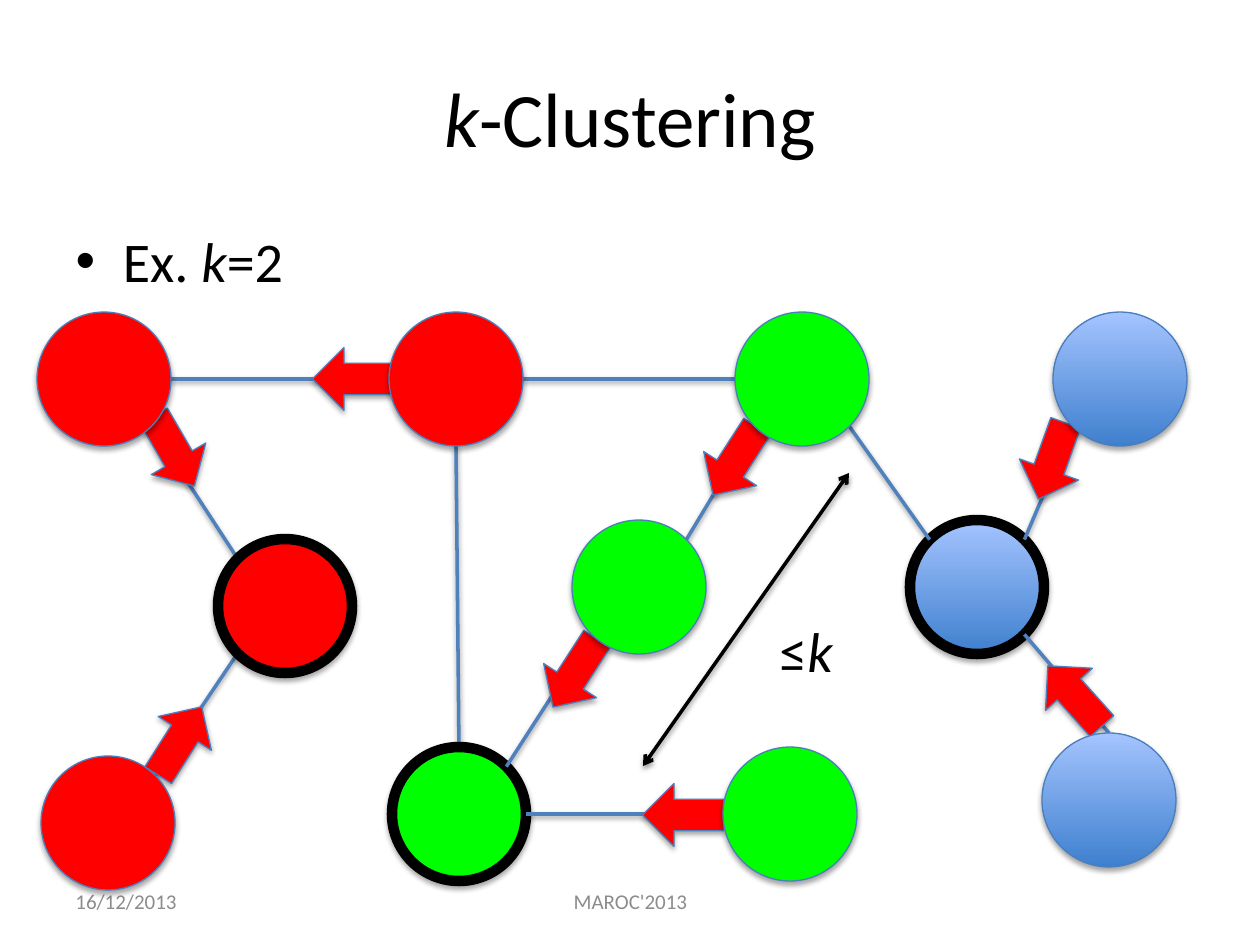
import pptx
import pptx.util
import pptx.dml.color
import pptx.enum.shapes
import pptx.enum.text
import pptx.oxml
import pptx.oxml.ns

COLORS = {"red": "FF0000", "green": "00FF00", "blue_low": "3F80CE", "blue_high": "A4C4FF",
          "link": "4F81BD", "rim": "4B7EBC", "black": "000000", "footer": "8C8C8C"}
FONT = "Calibri"
SCALE = 914400 / 126
DIAMETER = 134
ARROW_SIZE = (81, 63)

TITLE = [("k", True), ("-Clustering", False)]
EXAMPLE = [("Ex. ", False), ("k", True), ("=2", False)]
DISTANCE = [("≤", False), ("k", True)]
DATE = [("16/12/2013", False)]
EVENT = [("MAROC'2013", False)]

HUBS = {"red hub": (285, 606, "red"), "green hub": (459, 814, "green"),
        "blue hub": (977, 587, "blue")}
MEMBERS = {"red top": (456, 379, "red"), "red left": (104, 379, "red"),
           "red low": (108, 823, "red"), "green top": (802, 379, "green"),
           "green right": (790, 814, "green"), "blue top": (1120, 379, "blue"),
           "blue low": (1109, 800, "blue"), "green mid": (639, 587, "green")}
NODES = {**HUBS, **MEMBERS}

LINKS_BEHIND_HUBS = [("red left", "SE", "red hub", "NW"), ("red top", "S", "green hub", "N"),
                     ("green top", "SW", "green mid", "NE"), ("red hub", "SW", "red low", "NE")]
LINKS_OVER_HUBS = [("red left", "E", "red top", "W"), ("red top", "E", "green top", "W"),
                   ("green right", "W", "green hub", "E"), ("green mid", "SW", "green hub", "NE"),
                   ("green top", "SE", "blue hub", "NW"), ("blue top", "SW", "blue hub", "NE"),
                   ("blue low", "N", "blue hub", "SE")]
ARROWS = [(180, 741, 302.4), (174, 451, 59.9), (353, 379, 180), (683, 815, 180),
          (575, 673, 122.8), (735, 461, 122.8), (1052, 461, 109.7), (1075, 696, 228.1)]
SPAN = ((849, 473), (643, 766))


def px(value):
    return pptx.util.Emu(round(value * SCALE))


def rgb(name):
    return pptx.dml.color.RGBColor.from_string(COLORS[name])


def place(shape, left, top, width, height):
    shape.left, shape.top, shape.width, shape.height = map(px, (left, top, width, height))


def write(frame, runs, size, color="black", align=None):
    paragraph = frame.paragraphs[0]
    paragraph.alignment = align
    for text, italic in runs:
        run = paragraph.add_run()
        run.text = text
        run.font.name = FONT
        run.font.size = pptx.util.Pt(size)
        run.font.italic = italic
        run.font.color.rgb = rgb(color)


def add_shadow(shape, distance, opacity):
    shape._element.spPr.append(pptx.oxml.parse_xml(
        f'<a:effectLst {pptx.oxml.ns.nsdecls("a")}>'
        f'<a:outerShdw blurRad="39370" dist="{pptx.util.Pt(distance)}" dir="5400000" rotWithShape="0">'
        f'<a:srgbClr val="{COLORS["black"]}"><a:alpha val="{opacity * 1000}"/></a:srgbClr>'
        '</a:outerShdw></a:effectLst>'))


def add_solid(kind, center, size, color, rim="rim", rim_width=0.75):
    width, height = size
    shape = slide.shapes.add_shape(kind, px(center[0] - width / 2), px(center[1] - height / 2),
                                   px(width), px(height))
    if color == "blue":
        shape.fill.gradient()
        shape.fill.gradient_angle = 90
        for stop, shade in zip(shape.fill.gradient_stops, ("blue_low", "blue_high")):
            stop.color.rgb = rgb(shade)
    else:
        shape.fill.solid()
        shape.fill.fore_color.rgb = rgb(color)
    shape.line.color.rgb = rgb(rim)
    shape.line.width = pptx.util.Pt(rim_width)
    add_shadow(shape, 1.8, 35)
    return shape


def add_nodes(nodes, **rim):
    for x, y, color in nodes.values():
        add_solid(pptx.enum.shapes.MSO_SHAPE.OVAL, (x, y), (DIAMETER, DIAMETER), color, **rim)


def port(node, side):
    x, y, _ = NODES[node]
    reach = DIAMETER / 2 / len(side) ** 0.5
    return (x + reach * (("E" in side) - ("W" in side)),
            y + reach * (("S" in side) - ("N" in side)))


def add_line(start, end, color, heads=False):
    line = slide.shapes.add_connector(pptx.enum.shapes.MSO_CONNECTOR.STRAIGHT,
                                      *map(px, (*start, *end)))
    line.line.color.rgb = rgb(color)
    line.line.width = pptx.util.Pt(2)
    if heads:
        for tag in ("headEnd", "tailEnd"):
            line.line._get_or_add_ln().append(pptx.oxml.parse_xml(
                f'<a:{tag} {pptx.oxml.ns.nsdecls("a")} type="arrow"/>'))
    add_shadow(line, 1.6, 38)


def add_links(links):
    for start, start_side, end, end_side in links:
        add_line(port(start, start_side), port(end, end_side), "link")


def add_label(box, runs, size, color="black", align=None, wrap=True):
    label = slide.shapes.add_textbox(*map(px, box))
    label.text_frame.word_wrap = wrap
    if wrap:
        label.text_frame.vertical_anchor = pptx.enum.text.MSO_ANCHOR.MIDDLE
    write(label.text_frame, runs, size, color, align)


CENTER = pptx.enum.text.PP_ALIGN.CENTER
deck = pptx.Presentation()
deck.slide_width, deck.slide_height = px(1260), px(945)
slide = deck.slides.add_slide(deck.slide_layouts[1])

title, example = slide.placeholders
place(title, 63, 38, 1134, 157)
write(title.text_frame, TITLE, 44, align=CENTER)
place(example, 63, 220, 1134, 624)
write(example.text_frame, EXAMPLE, 32)
add_label((63, 876, 294, 50), DATE, 12, "footer")
add_label((431, 876, 399, 50), EVENT, 12, "footer", CENTER)

add_links(LINKS_BEHIND_HUBS)
add_nodes(HUBS, rim="black", rim_width=6)
add_links(LINKS_OVER_HUBS)
for x, y, turn in ARROWS:
    add_solid(pptx.enum.shapes.MSO_SHAPE.RIGHT_ARROW, (x, y), ARROW_SIZE, "red").rotation = turn
add_nodes(MEMBERS)

add_line(*SPAN, "black", heads=True)
add_label((767, 610, 89, 81), DISTANCE, 32, wrap=False)

deck.save("out.pptx")
